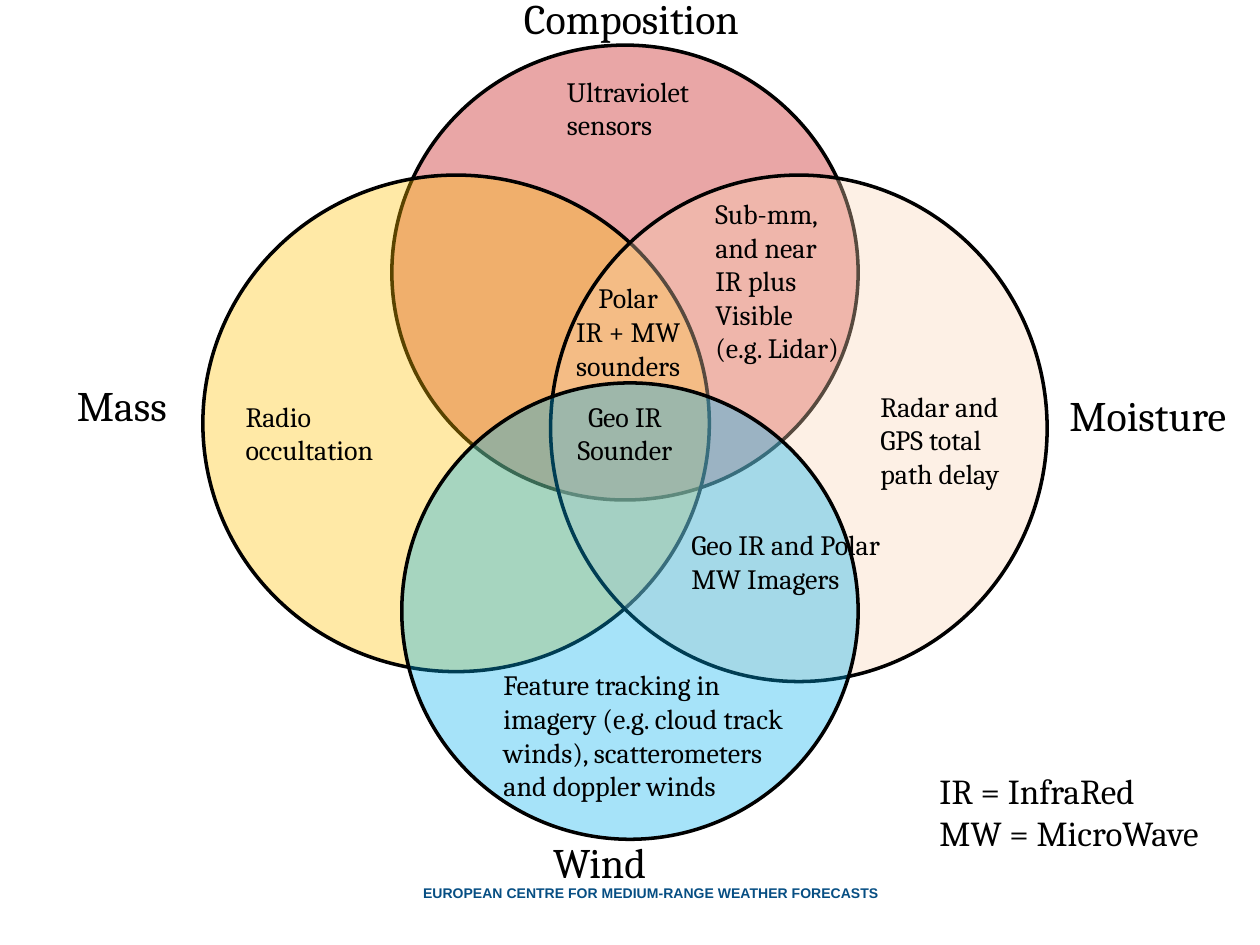
import pptx
import pptx.util
import pptx.dml.color
import pptx.enum.shapes
import pptx.enum.text
from lxml import etree
from pptx.util import Cm, Pt

ALIGN = pptx.enum.text.PP_ALIGN
ANCHOR = pptx.enum.text.MSO_ANCHOR


def paint(color, code):
    color.rgb = pptx.dml.color.RGBColor.from_string(code)


def write(box, lines, size, align=ALIGN.LEFT, font="Cambria", code="000000"):
    area = slide.shapes.add_textbox(*map(Cm, box))
    frame = area.text_frame
    frame.word_wrap = True
    frame.text = "\n".join(lines)
    for para in frame.paragraphs:
        para.alignment = align
        para.font.name = font
        para.font.size = Pt(size)
        paint(para.font.color, code)
    return frame


deck = pptx.Presentation()
deck.slide_width, deck.slide_height = Cm(25.4), Cm(19.05)
slide = deck.slides.add_slide(deck.slide_layouts[6])

# Footer
foot = write((8.23, 17.53, 9.58, 0.64),
             ["EUROPEAN CENTRE FOR MEDIUM-RANGE WEATHER FORECASTS"],
             8, font="Arial", code="064E83")
foot.paragraphs[0].font.bold = True
foot.vertical_anchor = ANCHOR.BOTTOM
foot.margin_left = Cm(0.3)
foot.margin_top = foot.margin_right = foot.margin_bottom = 0

# Four overlapping circles: composition, mass, moisture, wind
circles = [
    ((7.9, 0.91, 9.4, 9.17), "C00000"),
    ((4.09, 3.53, 10.21, 10.01), "FFC000"),
    ((11.1, 3.53, 10.01, 10.21), "FCD5B5"),
    ((8.1, 7.72, 9.2, 9.2), "00B0F0"),
]
for box, code in circles:
    ring = slide.shapes.add_shape(
        pptx.enum.shapes.MSO_SHAPE.OVAL, *map(Cm, box))
    ring.shadow.inherit = False
    ring.fill.solid()
    paint(ring.fill.fore_color, code)
    tint = ring.fill._xPr.find(".//" + pptx.oxml.ns.qn("a:srgbClr"))
    etree.SubElement(tint, pptx.oxml.ns.qn("a:alpha"), val="35000")
    paint(ring.line.color, "000000")
    ring.line.width = Pt(2)

# Sensors within one circle or an overlap
sensors = [
    ((4.7, 7.92, 3.61, 1.63), ["Radio occultation"]),
    ((13.69, 10.52, 4.39, 2.31), ["Geo IR and Polar MW Imagers"]),
    ((9.9, 13.34, 6.2, 3), ["Feature tracking in imagery (e.g. cloud track "
                            "winds), scatterometers and doppler winds"]),
    ((17.5, 7.72, 3, 2.31), ["Radar and", "GPS total path delay"]),
    ((11.18, 1.37, 3.2, 1.63), ["Ultraviolet sensors"]),
    ((14.17, 3.84, 3, 4.37),
     ["Sub-mm,", "and near IR plus", "Visible (e.g. Lidar)"]),
]
for box, lines in sensors:
    write(box, lines, 16)

# Sounders shared at the centre
write((10.9, 7.92, 3.4, 1.63), ["Geo IR Sounder"], 16, ALIGN.CENTER)
write((10.9, 5.54, 3.53, 2.31), ["Polar", "IR + MW", "sounders"],
      16, ALIGN.CENTER)

# Names of the circles
names = [
    ((21.31, 7.72, 4.8, 1.3), "Moisture"),
    ((1.3, 7.52, 2.39, 1.3), "Mass"),
    ((10.9, 16.74, 7.8, 1.3), "Wind"),
    ((10.31, -0.28, 5.21, 1.3), "Composition"),
]
for box, name in names:
    write(box, [name], 24)

# Key to the short forms
write((18.69, 15.39, 7.29, 1.96), ["IR = InfraRed", "MW = MicroWave"], 20)

deck.save("out.pptx")
